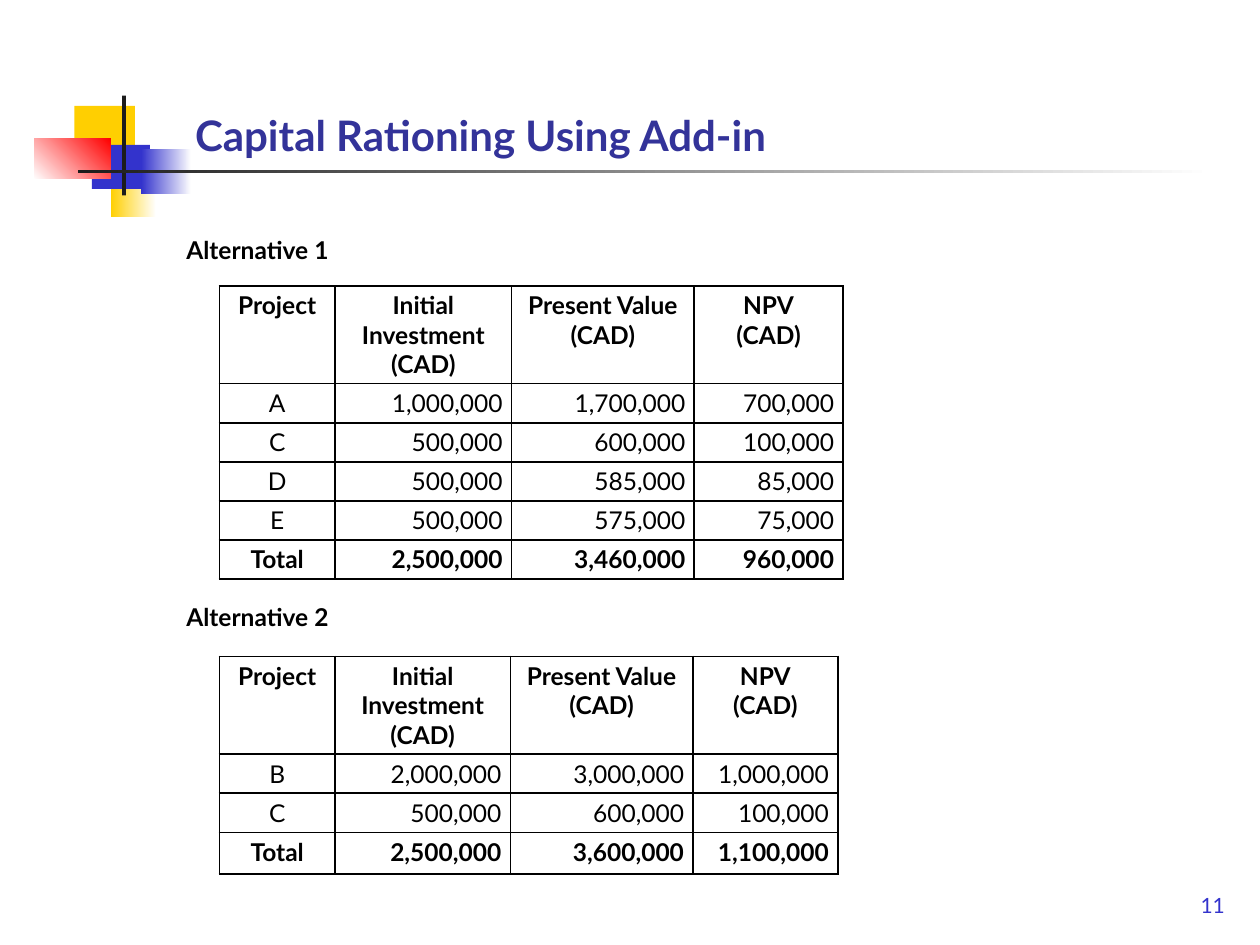
from lxml.etree import SubElement
from pptx import Presentation
from pptx.dml.color import RGBColor
from pptx.enum.shapes import MSO_SHAPE
from pptx.enum.text import MSO_ANCHOR, PP_ALIGN
from pptx.oxml.ns import qn
from pptx.util import Inches, Pt

COLORS = {"yellow": "FFCF01", "blue": "3333CC", "red": "FF0000", "white": "FFFFFF",
          "dark": "1C1C1C", "title": "333399", "black": "000000"}
FONT = "Lato"


def rgb(name):
    return RGBColor.from_string(COLORS[name])


def write(tf, text, size=14, color="black", bold=False, align=PP_ALIGN.LEFT):
    """Fill a text frame, one paragraph for each line of text."""
    for i, line in enumerate(text.split("\n")):
        p = tf.add_paragraph() if i else tf.paragraphs[0]
        p.alignment = align
        r = p.add_run()
        r.text = line
        r.font.name = FONT
        r.font.size = Pt(size)
        r.font.bold = bold
        r.font.color.rgb = rgb(color)


class SlideBuilder:
    def __init__(self, slide):
        self.slide = slide
        self.border = Pt(1)

    def block(self, x, y, w, h, start, end=None, angle=0):
        """Rectangle in one colour, or in a gradient from start to end."""
        sp = self.slide.shapes.add_shape(
            MSO_SHAPE.RECTANGLE, Inches(x), Inches(y), Inches(w), Inches(h))
        sp.shadow.inherit = False
        sp.line.fill.background()
        if end is None:
            sp.fill.solid()
            sp.fill.fore_color.rgb = rgb(start)
            return
        sp.fill.gradient()
        sp.fill.gradient_angle = angle
        for stop, color in zip(sp.fill.gradient_stops, (start, end)):
            stop.color.rgb = rgb(color)

    def text(self, x, y, w, h, text, anchor=MSO_ANCHOR.TOP, inset=0.05, **style):
        sp = self.slide.shapes.add_textbox(Inches(x), Inches(y), Inches(w), Inches(h))
        tf = sp.text_frame
        tf.word_wrap = True
        tf.vertical_anchor = anchor
        tf.margin_top = tf.margin_bottom = Inches(inset)
        write(tf, text, **style)

    def table(self, x, y, widths, heights, rows):
        """Ruled table with bold first and last rows."""
        table = self.slide.shapes.add_table(
            len(rows), len(widths), Inches(x), Inches(y),
            Inches(sum(widths)), Inches(sum(heights))).table
        table.first_row = table.horz_banding = False
        for column, width in zip(table.columns, widths):
            column.width = Inches(width)
        for row, height in zip(table.rows, heights):
            row.height = Inches(height)
        for i, row in enumerate(rows):
            for j, text in enumerate(row):
                centered = i == 0 or j == 0
                self.cell(table.cell(i, j), text, bold=i in (0, len(rows) - 1),
                          align=PP_ALIGN.CENTER if centered else PP_ALIGN.RIGHT)

    def cell(self, cell, text, **style):
        cell.margin_left = cell.margin_right = Inches(0.07)
        cell.margin_top = cell.margin_bottom = Pt(2.7)
        props = cell._tc.get_or_add_tcPr()
        for side in ("lnL", "lnR", "lnT", "lnB"):
            ln = SubElement(props, qn(f"a:{side}"), w=str(self.border))
            fill = SubElement(ln, qn("a:solidFill"))
            SubElement(fill, qn("a:srgbClr"), val=COLORS["black"])
        cell.fill.background()
        write(cell.text_frame, text, **style)


def main():
    prs = Presentation()
    prs.slide_width, prs.slide_height = Inches(10), Inches(7.5)
    page = SlideBuilder(prs.slides.add_slide(prs.slide_layouts[6]))

    # Corner ornament and title rule
    page.block(0.88, 1.2, 0.36, 0.52, "yellow", "white")
    page.block(0.59, 0.84, 0.48, 0.35, "yellow")
    page.block(0.73, 1.15, 0.46, 0.35, "blue")
    page.block(1.12, 1.18, 0.4, 0.36, "blue", "white")
    page.block(0.27, 1.1, 0.61, 0.32, "white", "red", angle=45)
    page.block(0.97, 0.76, 0.03, 0.79, "dark")
    page.block(0.62, 1.35, 9, 0.02, "dark", "white")

    # Title and page number
    page.text(1.45, 0.69, 6.2, 0.63, "Capital Rationing Using Add-in",
              anchor=MSO_ANCHOR.BOTTOM, size=24, color="title", bold=True)
    page.text(8.26, 7.08, 1.56, 0.38, "11", inset=0, size=12, color="blue",
              align=PP_ALIGN.RIGHT)

    # Tables of the two alternatives
    header = ("Project", "Initial Investment (CAD)", "Present Value\n(CAD)", "NPV\n(CAD)")
    page.table(1.74, 2.27, (0.92, 1.4, 1.45, 1.18), [0.77] + [0.31] * 5, [
        header,
        ("A", "1,000,000", "1,700,000", "700,000"),
        ("C", "500,000", "600,000", "100,000"),
        ("D", "500,000", "585,000", "85,000"),
        ("E", "500,000", "575,000", "75,000"),
        ("Total", "2,500,000", "3,460,000", "960,000"),
    ])
    page.table(1.74, 5.21, (0.92, 1.39, 1.45, 1.15), [0.77, 0.31, 0.31, 0.33], [
        header,
        ("B", "2,000,000", "3,000,000", "1,000,000"),
        ("C", "500,000", "600,000", "100,000"),
        ("Total", "2,500,000", "3,600,000", "1,100,000"),
    ])

    # Table headings
    for number, y in ((1, 1.82), (2, 4.73)):
        page.text(1.38, y, 1.49, 0.34, f"Alternative {number}", bold=True)

    prs.save("out.pptx")


if __name__ == "__main__":
    main()
